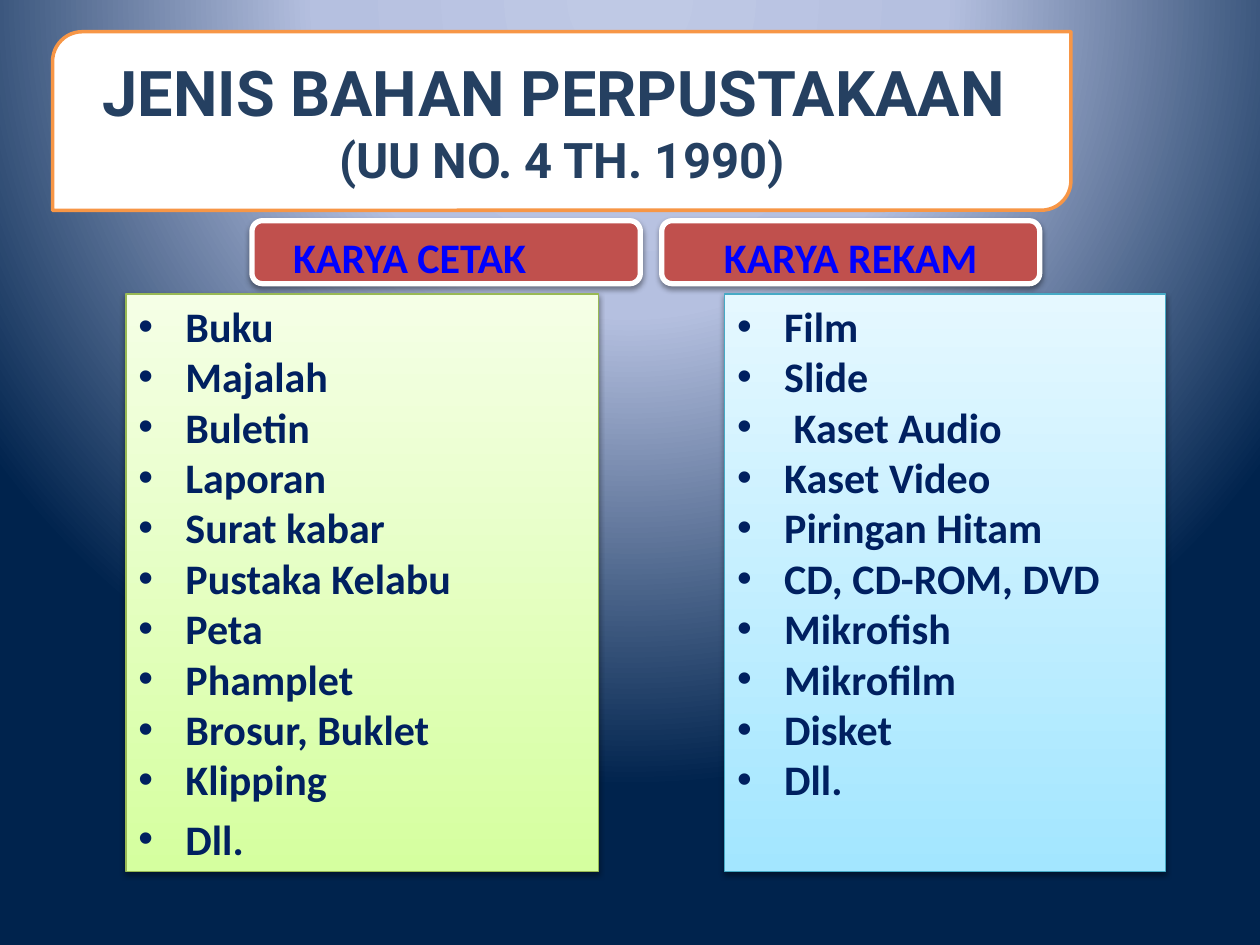
"""Build the slide on kinds of library material: printed and recorded works."""
import lxml.etree
import pptx
import pptx.dml.color
import pptx.enum.shapes
import pptx.enum.text
import pptx.oxml
import pptx.oxml.ns
import pptx.util

Cm, Pt = pptx.util.Cm, pptx.util.Pt
RGBColor = pptx.dml.color.RGBColor
SHAPE = pptx.enum.shapes.MSO_SHAPE
ALIGN = pptx.enum.text.PP_ALIGN
ANCHOR = pptx.enum.text.MSO_ANCHOR
qn = pptx.oxml.ns.qn

WHITE = RGBColor(0xFF, 0xFF, 0xFF)
ORANGE = RGBColor(0xF7, 0x96, 0x46)
RED = RGBColor(0xC0, 0x50, 0x4D)
SLATE = RGBColor(0x25, 0x40, 0x61)
BLUE = RGBColor(0x00, 0x00, 0xFF)
NAVY = RGBColor(0x00, 0x20, 0x60)
GREEN_EDGE = RGBColor(0x98, 0xB9, 0x54)
GREEN_TOP = RGBColor(0xF5, 0xFF, 0xE6)
GREEN_BOTTOM = RGBColor(0xD5, 0xFF, 0x9F)
CYAN_EDGE = RGBColor(0x46, 0xAA, 0xC5)
CYAN_TOP = RGBColor(0xE5, 0xF8, 0xFF)
CYAN_BOTTOM = RGBColor(0xA3, 0xE6, 0xFF)
GLOW = RGBColor(0xBF, 0xC9, 0xE5)
HAZE = RGBColor(0xB5, 0xC0, 0xE0)
NIGHT = RGBColor(0x00, 0x23, 0x4D)

PRINTED = ["Buku", "Majalah", "Buletin", "Laporan", "Surat kabar", "Pustaka Kelabu",
           "Peta", "Phamplet", "Brosur, Buklet", "Klipping", "Dll."]
RECORDED = ["Film", "Slide", " Kaset Audio", "Kaset Video", "Piringan Hitam",
            "CD, CD-ROM, DVD", "Mikrofish", "Mikrofilm", "Disket", "Dll."]


def write(paragraph, text, size=24, font="Calibri", color=NAVY, align=ALIGN.LEFT):
    """Add a bold run of text to the paragraph."""
    paragraph.alignment = align
    run = paragraph.add_run()
    run.text = text
    run.font.size = Pt(size)
    run.font.name = font
    run.font.bold = True
    run.font.color.rgb = color


class LibrarySlide:
    """Hold the style and the current slide."""

    indent = Cm(0.95)
    last_gap = Pt(5)

    def __init__(self, deck):
        """Add a blank slide to the deck."""
        self.slide = deck.slides.add_slide(deck.slide_layouts[6])

    def background(self, stops):
        """Fill the background with a circular gradient centred above the slide."""
        self.slide.background.fill.gradient()
        gradient = self.slide.element.find(".//" + qn("a:gradFill"))
        marks = "".join(f'<a:gs pos="{position * 1000}"><a:srgbClr val="{color}"/></a:gs>'
                        for position, color in stops)
        gradient.getparent().replace(gradient, pptx.oxml.parse_xml(
            f'<a:gradFill {pptx.oxml.ns.nsdecls("a")} rotWithShape="1"><a:gsLst>{marks}</a:gsLst>'
            '<a:path path="circle"><a:fillToRect l="50000" t="-80000" r="50000" b="180000"/>'
            '</a:path></a:gradFill>'))

    def panel(self, kind, box, colors, edge, width, shadow=True):
        """Draw a shape with a plain or a top-to-bottom gradient fill."""
        shape = self.slide.shapes.add_shape(kind, *map(Cm, box))
        shape.shadow.inherit = False
        if len(colors) == 1:
            shape.fill.solid()
            shape.fill.fore_color.rgb = colors[0]
        else:
            shape.fill.gradient()
            shape.fill.gradient_angle = 270
            for stop, color in zip(shape.fill.gradient_stops, colors):
                stop.color.rgb = color
        shape.line.color.rgb = edge
        shape.line.width = Pt(width)
        if shadow:
            effects = shape.element.spPr.find(qn("a:effectLst"))
            cast = lxml.etree.SubElement(effects, qn("a:outerShdw"), blurRad=str(Pt(3.1)),
                                         dist=str(Pt(1.6)), dir="5400000", rotWithShape="0")
            black = lxml.etree.SubElement(cast, qn("a:srgbClr"), val="000000")
            lxml.etree.SubElement(black, qn("a:alpha"), val="38000")
        return shape

    def text_frame(self, box, anchor):
        """Add a wrapping text box and return its frame."""
        frame = self.slide.shapes.add_textbox(*map(Cm, box)).text_frame
        frame.word_wrap = True
        frame.vertical_anchor = anchor
        return frame

    def title(self, box, heading, law):
        """Write the heading with the law on the line below."""
        paragraph = self.text_frame(box, ANCHOR.MIDDLE).paragraphs[0]
        style = dict(font="Roboto", color=SLATE, align=ALIGN.CENTER)
        write(paragraph, heading, size=36, **style)
        paragraph.add_line_break()
        write(paragraph, law, size=28, **style)

    def label(self, box, text):
        """Write a column heading."""
        frame = self.text_frame(box, ANCHOR.BOTTOM)
        write(frame.paragraphs[0], text, color=BLUE, align=ALIGN.CENTER)

    def bullets(self, shape, items, gap_before_last=False):
        """Write a bulleted list in the shape."""
        frame = shape.text_frame
        frame.word_wrap = True
        frame.vertical_anchor = ANCHOR.TOP
        for index, item in enumerate(items):
            paragraph = frame.add_paragraph() if index else frame.paragraphs[0]
            write(paragraph, item)
            properties = paragraph._p.get_or_add_pPr()
            properties.set("marL", str(self.indent))
            properties.set("indent", str(-self.indent))
            lxml.etree.SubElement(properties, qn("a:buFont"), typeface="Arial")
            lxml.etree.SubElement(properties, qn("a:buChar"), char="•")
        if gap_before_last:
            paragraph.space_before = self.last_gap


def main():
    """Build and save the slide."""
    deck = pptx.Presentation()
    deck.slide_width, deck.slide_height = Cm(25.4), Cm(19.05)
    page = LibrarySlide(deck)
    page.background([(0, GLOW), (40, HAZE), (100, NIGHT)])

    page.panel(SHAPE.ROUND_2_DIAG_RECTANGLE, (1.06, 0.64, 20.53, 3.6), [WHITE], ORANGE, 2,
               shadow=False)
    page.title((1.27, 0.85, 20.11, 3.18), "JENIS BAHAN PERPUSTAKAAN ", "(UU NO. 4 TH. 1990)")

    columns = [
        ("KARYA CETAK", 4.45, (5.08, 7.83), (2.54, 9.53),
         [GREEN_TOP, GREEN_BOTTOM], GREEN_EDGE, PRINTED, True),
        ("KARYA REKAM", 13.34, (13.34, 7.62), (14.61, 8.89),
         [CYAN_TOP, CYAN_BOTTOM], CYAN_EDGE, RECORDED, False),
    ]
    for heading, label_left, plate, body, colors, edge, items, gap in columns:
        page.panel(SHAPE.ROUNDED_RECTANGLE, (plate[0], 4.45, plate[1], 1.27), [RED], WHITE, 3)
        page.label((label_left, 4.02, 7.62, 1.78), heading)
        card = page.panel(SHAPE.RECTANGLE, (body[0], 5.93, body[1], 11.64), colors, edge, 0.75)
        page.bullets(card, items, gap_before_last=gap)

    deck.save("out.pptx")


if __name__ == "__main__":
    main()
